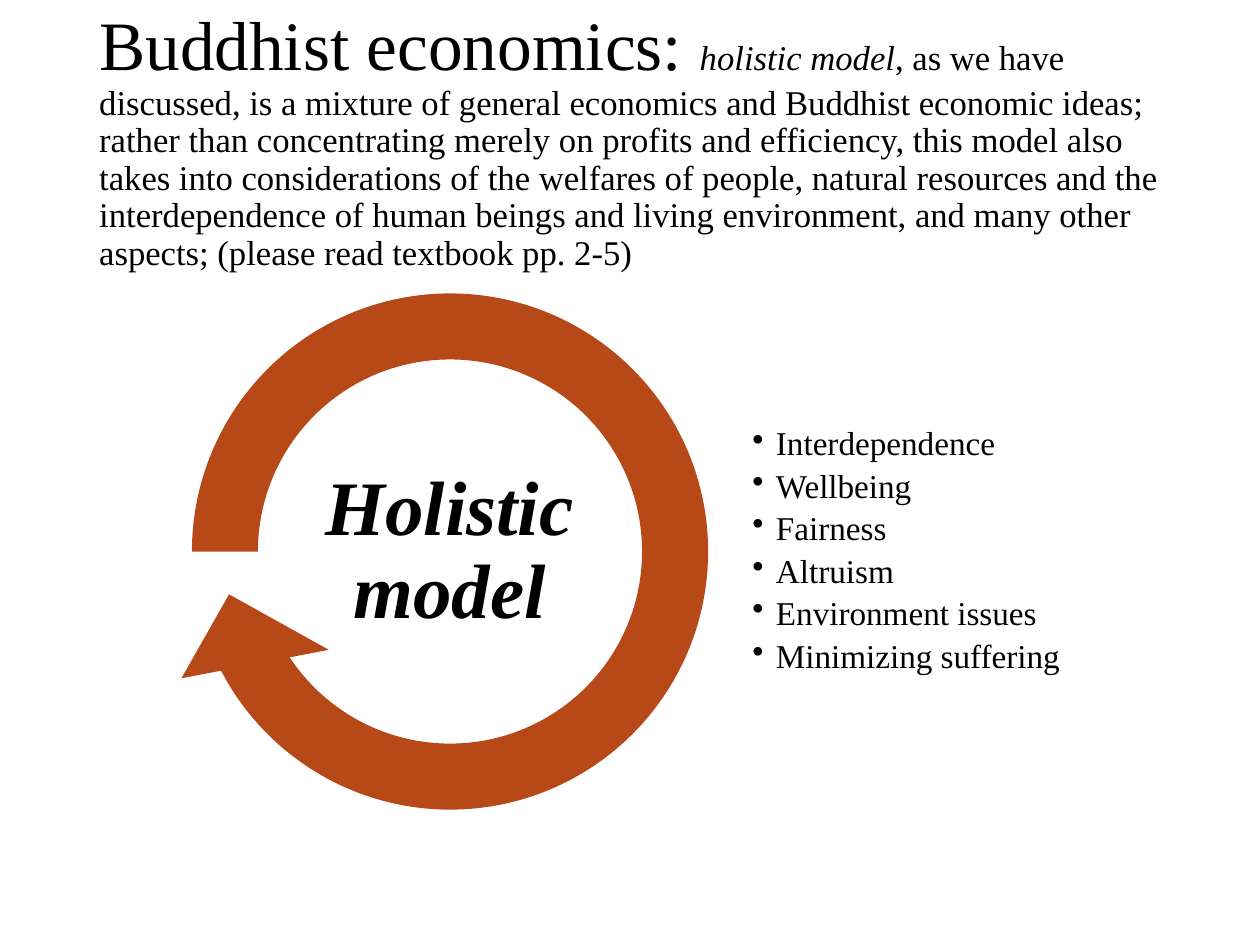
import dataclasses
import typing

import lxml.etree
import pptx
import pptx.dml.color
import pptx.enum.shapes
import pptx.enum.text
import pptx.oxml.ns
import pptx.util

Pt = pptx.util.Pt
ALIGN = pptx.enum.text.PP_ALIGN
COLORS = {"text": "000000", "arrow": "B74919"}
FONT = "Times New Roman"
LINE_SPACING = 0.9


@dataclasses.dataclass
class TextRun:
    text: str
    size: float
    bold: bool = False
    italic: bool = False


@dataclasses.dataclass
class Box:
    left: float
    top: float
    width: float
    height: float

    def lengths(self) -> list[int]:
        return [Pt(value) for value in dataclasses.astuple(self)]


def color(name: str) -> pptx.dml.color.RGBColor:
    return pptx.dml.color.RGBColor.from_string(COLORS[name])


def fill_paragraph(paragraph: typing.Any, runs: list[TextRun], alignment: typing.Any) -> None:
    paragraph.alignment = alignment
    paragraph.line_spacing = LINE_SPACING
    for item in runs:
        run = paragraph.add_run()
        run.text = item.text
        run.font.name = FONT
        run.font.size = Pt(item.size)
        run.font.bold = item.bold
        run.font.italic = item.italic
        run.font.color.rgb = color("text")


def add_bullet(paragraph: typing.Any, indent: float) -> None:
    properties = paragraph._p.get_or_add_pPr()
    properties.set("marL", str(Pt(indent)))
    properties.set("indent", str(-Pt(indent)))
    bullet = lxml.etree.SubElement(properties, pptx.oxml.ns.qn("a:buChar"))
    bullet.set("char", "•")


def add_text_frame(slide: typing.Any, box: Box, margin: float) -> typing.Any:
    text_frame = slide.shapes.add_textbox(*box.lengths()).text_frame
    text_frame.word_wrap = True
    text_frame.vertical_anchor = pptx.enum.text.MSO_ANCHOR.MIDDLE
    text_frame.margin_left = text_frame.margin_right = Pt(margin)
    text_frame.margin_top = text_frame.margin_bottom = Pt(margin)
    return text_frame


def add_title(slide: typing.Any, box: Box, runs: list[TextRun]) -> None:
    title = slide.shapes.title
    title.left, title.top, title.width, title.height = box.lengths()
    text_frame = title.text_frame
    text_frame.word_wrap = True
    text_frame.auto_size = pptx.enum.text.MSO_AUTO_SIZE.NONE
    text_frame.vertical_anchor = pptx.enum.text.MSO_ANCHOR.MIDDLE
    fill_paragraph(text_frame.paragraphs[0], runs, ALIGN.LEFT)


def add_circular_arrow(slide: typing.Any, box: Box, adjustments: list[float]) -> None:
    arrow = slide.shapes.add_shape(
        pptx.enum.shapes.MSO_SHAPE.CIRCULAR_ARROW, *box.lengths())
    for index, value in enumerate(adjustments):
        arrow.adjustments[index] = value
    arrow.shadow.inherit = False
    arrow.fill.solid()
    arrow.fill.fore_color.rgb = color("arrow")
    arrow.line.fill.background()


def add_bullet_list(slide: typing.Any, box: Box, items: list[str]) -> None:
    text_frame = add_text_frame(slide, box, margin=1.5)
    for index, item in enumerate(items):
        paragraph = text_frame.add_paragraph() if index else text_frame.paragraphs[0]
        fill_paragraph(paragraph, [TextRun(item, 19)], ALIGN.LEFT)
        paragraph.space_after = Pt(3.75)
        add_bullet(paragraph, indent=13.5)


def main() -> None:
    presentation = pptx.Presentation()
    presentation.slide_width, presentation.slide_height = Pt(720), Pt(540)
    slide = presentation.slides.add_slide(presentation.slide_layouts[5])

    # Title with the explanation
    add_title(slide, Box(49.5, 28.75, 621, 104.4), [
        TextRun("Buddhist economics: ", 39.6),
        TextRun("holistic model", 19.8, italic=True),
        TextRun(", as we have discussed, is a mixture of general economics and "
                "Buddhist economic ideas; rather than concentrating merely on profits "
                "and efficiency, this model also takes into considerations of the "
                "welfares of people, natural resources and the interdependence of "
                "human beings and living environment, and many other aspects; "
                "(please read textbook pp. 2-5)", 19.8),
    ])

    # Cycle arrow: thickness, head angle, end angle, start angle, head width
    add_circular_arrow(slide, Box(85.7, 143.7, 343, 343), [0.11, 11.42, 90, 108, 0.125])

    # Aspects of the model
    add_bullet_list(slide, Box(428.4, 246.5, 206, 137), [
        "Interdependence", "Wellbeing", "Fairness",
        "Altruism", "Environment issues", "Minimizing suffering",
    ])

    # Label inside the arrow
    label = add_text_frame(slide, Box(161.5, 267.5, 191, 95.5), margin=2)
    fill_paragraph(label.paragraphs[0],
                   [TextRun("Holistic model", 44, bold=True, italic=True)], ALIGN.CENTER)

    presentation.save("out.pptx")


if __name__ == "__main__":
    main()
